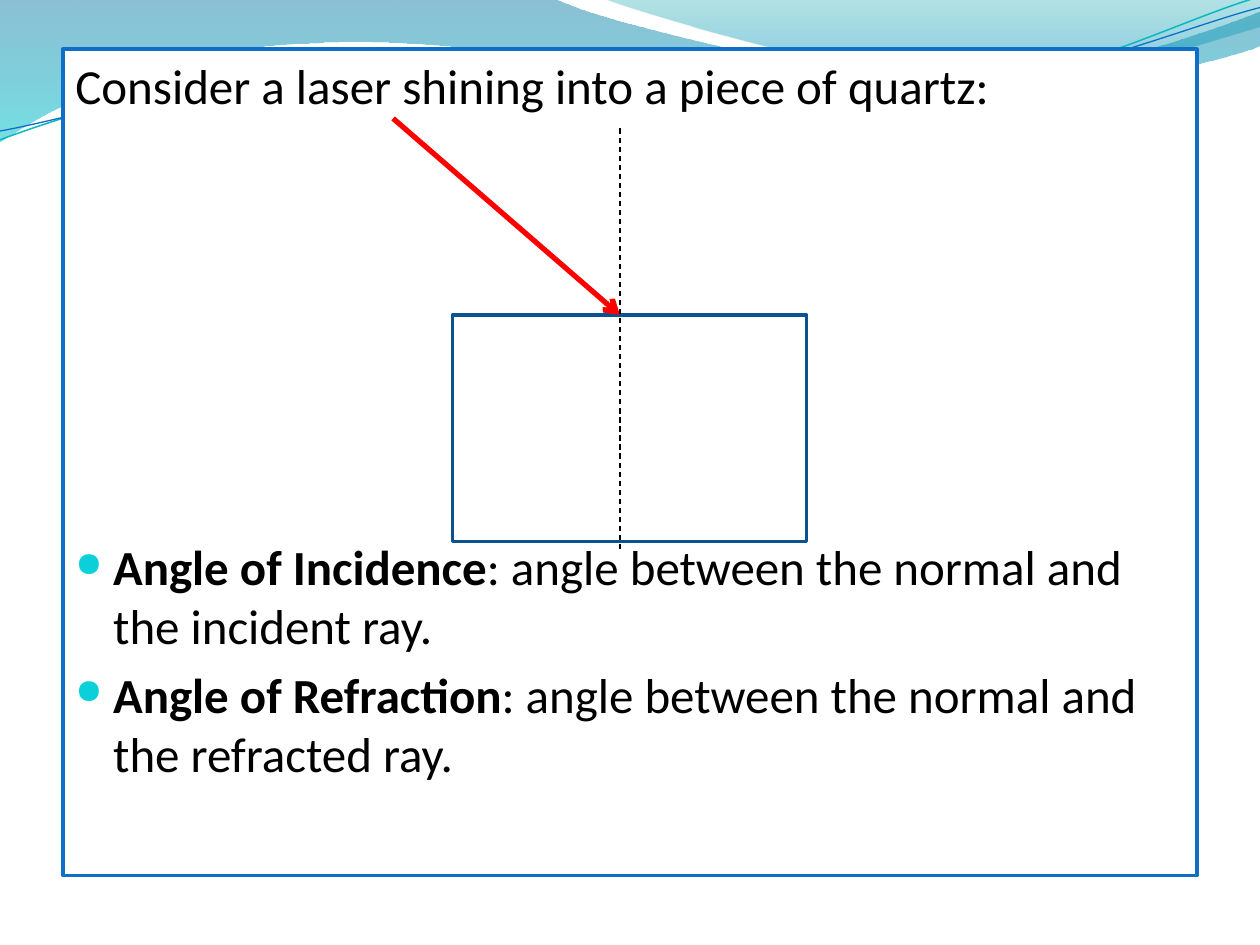
from lxml import etree
from pptx import Presentation
from pptx.dml.color import RGBColor
from pptx.enum.dml import MSO_LINE
from pptx.enum.shapes import MSO_CONNECTOR, MSO_SHAPE
from pptx.enum.text import MSO_ANCHOR, PP_ALIGN
from pptx.oxml import parse_xml
from pptx.oxml.ns import qn
from pptx.util import Inches, Pt

RECTANGLE = MSO_SHAPE.RECTANGLE
STRAIGHT = MSO_CONNECTOR.STRAIGHT
DASH = MSO_LINE.DASH
TOP = MSO_ANCHOR.TOP
LEFT = PP_ALIGN.LEFT
DRAWING = "http://schemas.openxmlformats.org/drawingml/2006/main"


def color(value):
    return RGBColor.from_string(value)


def add_wave(shapes, start, segments, closed):
    points = [pair for segment in segments for pair in zip(segment[::2], segment[1::2])]
    builder = shapes.build_freeform(Inches(start[0]), Inches(start[1]))
    builder.add_line_segments([(Inches(x), Inches(y)) for x, y in points], close=closed)
    wave = builder.convert_to_shape()
    wave.shadow.inherit = False
    lines = iter(list(wave._element.iter(qn("a:lnTo"))))
    for segment in segments:
        line = next(lines)
        if len(segment) == 6:
            curve = etree.Element(qn("a:cubicBezTo"))
            line.addprevious(curve)
            for handle in (line, next(lines), next(lines)):
                curve.append(handle[0])
                handle.getparent().remove(handle)
    return wave


presentation = Presentation()
presentation.slide_width = Inches(10)
presentation.slide_height = Inches(7.5)
slide = presentation.slides.add_slide(presentation.slide_layouts[6])
shapes = slide.shapes

bands = [
    ((0, 0), [
        (4.4, -0.01), (4.76, 0.17, 6.64, 0.63, 7.58, 0.63), (8.53, 0.63, 9.58, 0.26, 10, 0.09),
        (10.01, 0.36), (9.83, 0.44, 8.7, 0.76, 7.46, 0.75), (6.22, 0.75, 3.82, 0.28, 2.57, 0.34),
        (1.29, 0.36, 0.46, 0.83, -0.01, 1.13),
    ], [(0, "0074A1", 45), (100, "00C6CF", 55)]),
    ((4.79, -0.01), [
        (5.09, 0.11, 6.82, 0.62, 7.69, 0.65), (8.56, 0.69, 9.61, 0.32, 10, 0.21), (10, 0),
    ], [(0, "00A1A9", 30), (80, "008BBF", 45)]),
]
for start, segments, stops in bands:
    band = add_wave(shapes, start, segments, True)
    band.line.fill.background()
    band.fill.background()
    stop_xml = "".join(
        f'<a:gs pos="{position * 1000}"><a:srgbClr val="{value}">'
        f'<a:alpha val="{opacity * 1000}"/></a:srgbClr></a:gs>'
        for position, value, opacity in stops
    )
    gradient = parse_xml(
        f'<a:gradFill xmlns:a="{DRAWING}" rotWithShape="1"><a:gsLst>{stop_xml}</a:gsLst>'
        '<a:lin ang="5400000" scaled="0"/></a:gradFill>'
    )
    properties = band._element.spPr
    properties.replace(properties.find(qn("a:noFill")), gradient)

strands = [
    ((0, 1.11), [
        (0.48, 0.93, 1.58, 0.57, 2.77, 0.52), (3.95, 0.47, 5.93, 0.89, 7.13, 0.8),
        (8.33, 0.71, 9.38, 0.15, 9.98, -0.02),
    ], "0AB8BF", 0.85),
    ((0, 1.04), [
        (0.47, 0.96, 1.64, 0.61, 2.83, 0.56), (4.03, 0.51, 5.97, 0.84, 7.17, 0.75),
        (8.36, 0.67, 9.41, 0.21, 10, 0.06),
    ], "0F6FC6", 0.75),
]
for start, segments, line_color, width in strands:
    strand = add_wave(shapes, start, segments, False)
    strand.fill.background()
    strand.line.color.rgb = color(line_color)
    strand.line.width = Pt(width)

boxes = []
for left, top, width, height, line_color in [
    (0.5, 0.39, 9, 6.56, "0F6FC6"),
    (3.59, 2.5, 2.81, 1.8, "0B5292"),
]:
    box = shapes.add_shape(RECTANGLE, Inches(left), Inches(top), Inches(width), Inches(height))
    box.shadow.inherit = False
    box.fill.solid()
    box.fill.fore_color.rgb = color("FFFFFF")
    box.line.color.rgb = color(line_color)
    box.line.width = Pt(2)
    boxes.append(box)

text_frame = boxes[0].text_frame
text_frame.word_wrap = True
text_frame.vertical_anchor = TOP
statements = [
    ("", "Consider a laser shining into a piece of quartz:", 0),
    ("Angle of Incidence", ": angle between the normal and the incident ray.", 241.5),
    ("Angle of Refraction", ": angle between the normal and the refracted ray.", 5.6),
]
for index, (term, wording, space_before) in enumerate(statements):
    paragraph = text_frame.add_paragraph() if index else text_frame.paragraphs[0]
    paragraph.alignment = LEFT
    paragraph.space_before = Pt(space_before)
    paragraph.font.size = Pt(28)
    paragraph.font.name = "Calibri"
    paragraph.font.color.rgb = color("000000")
    properties = paragraph._p.get_or_add_pPr()
    properties.set("marL", str(Inches(0.3)))
    properties.set("indent", str(Inches(-0.3)))
    if term:
        bullet_color = parse_xml(f'<a:buClr xmlns:a="{DRAWING}"><a:srgbClr val="0BD0D9"/></a:buClr>')
        bullet_size = parse_xml(f'<a:buSzPct xmlns:a="{DRAWING}" val="70000"/>')
        bullet = parse_xml(f'<a:buChar xmlns:a="{DRAWING}" char="●"/>')
        defaults = properties.find(qn("a:defRPr"))
        for element in (bullet_color, bullet_size, bullet):
            defaults.addprevious(element)
        term_run = paragraph.add_run()
        term_run.text = term
        term_run.font.bold = True
    paragraph.add_run().text = wording

connectors = []
for x1, y1, x2, y2, line_color, width in [
    (3.12, 0.94, 4.92, 2.5, "FF0000", 3),
    (4.92, 1.02, 4.92, 4.38, "000000", 0.75),
]:
    connector = shapes.add_connector(STRAIGHT, Inches(x1), Inches(y1), Inches(x2), Inches(y2))
    connector.line.color.rgb = color(line_color)
    connector.line.width = Pt(width)
    etree.SubElement(connector._element.spPr, qn("a:effectLst"))
    connectors.append(connector)

laser, normal = connectors
etree.SubElement(laser.line._get_or_add_ln(), qn("a:tailEnd"), type="arrow")
normal.line.dash_style = DASH

presentation.save("out.pptx")
